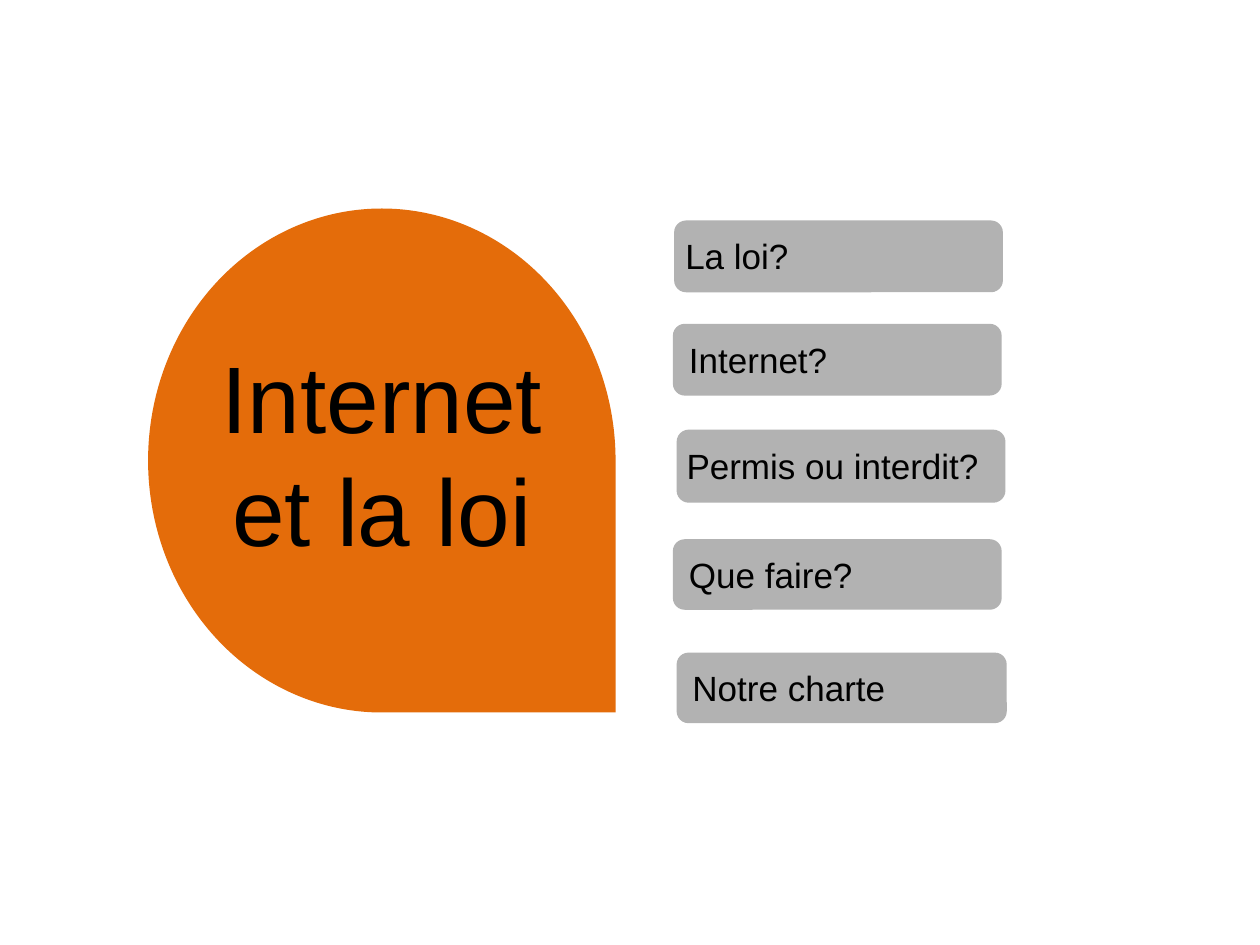
from pptx import Presentation
from pptx.dml.color import RGBColor
from pptx.enum.shapes import MSO_SHAPE
from pptx.enum.text import MSO_ANCHOR, PP_ALIGN
from pptx.util import Inches, Pt

SLIDE_WIDTH, SLIDE_HEIGHT = Inches(10), Inches(7.5)
COLUMN = SLIDE_WIDTH / 100
ROW = SLIDE_HEIGHT / 75
ORANGE = RGBColor(0xE4, 0x6C, 0x0A)
GREY = RGBColor(0xB2, 0xB2, 0xB2)
BLACK = RGBColor(0, 0, 0)
FONT = "Arial"
LABEL_SIZE = 20
LABEL_HEIGHT = 4.4

TOPICS = [
    ("La loi?", (53.5, 17.5, 26.1, 5.7), (53.4, 13.2)),
    ("Internet?", (53.4, 25.7, 26.1, 5.7), (53.7, 20.7)),
    ("Permis ou interdit?", (53.7, 34.1, 26.1, 5.8), (53.5, 26.1)),
    ("Que faire?", (53.4, 42.8, 26.1, 5.6), (53.7, 19.7)),
]


def place(left, top, width, height):
    return (round(left * COLUMN), round(top * ROW),
            round(width * COLUMN), round(height * ROW))


def add_filled_shape(page, preset, area, color):
    shape = page.shapes.add_shape(preset, *place(*area))
    shape.shadow.inherit = False
    shape.fill.solid()
    shape.fill.fore_color.rgb = color
    shape.line.fill.background()
    return shape


def write(shape, text, size, alignment=PP_ALIGN.LEFT):
    frame = shape.text_frame
    frame.word_wrap = True
    para = frame.paragraphs[0]
    para.alignment = alignment
    span = para.add_run()
    span.text = text
    span.font.name = FONT
    span.font.size = Pt(size)
    span.font.color.rgb = BLACK


def add_label(page, text, area, size, alignment=PP_ALIGN.LEFT):
    box = page.shapes.add_textbox(*place(*area))
    write(box, text, size, alignment)


def add_topic(page, text, bar, label):
    add_filled_shape(page, MSO_SHAPE.ROUNDED_RECTANGLE, bar, GREY)
    left, width = label
    top = bar[1] + (bar[3] - LABEL_HEIGHT) / 2
    add_label(page, text, (left, top, width, LABEL_HEIGHT), LABEL_SIZE)


def main():
    deck = Presentation()
    deck.slide_width, deck.slide_height = SLIDE_WIDTH, SLIDE_HEIGHT
    page = deck.slides.add_slide(deck.slide_layouts[6])

    drop = add_filled_shape(page, MSO_SHAPE.TEAR, (10.3, 18, 40, 37.1), ORANGE)
    drop.rotation = 90
    add_label(page, "Internet et la loi", (16.2, 26.4, 28.2, 19.2), 54, PP_ALIGN.CENTER)

    for text, bar, label in TOPICS:
        add_topic(page, text, bar, label)

    charter = add_filled_shape(page, MSO_SHAPE.ROUNDED_RECTANGLE, (53.7, 51.8, 26.2, 5.6), GREY)
    charter.text_frame.vertical_anchor = MSO_ANCHOR.MIDDLE
    write(charter, "Notre charte", LABEL_SIZE)

    deck.save("out.pptx")


if __name__ == "__main__":
    main()
